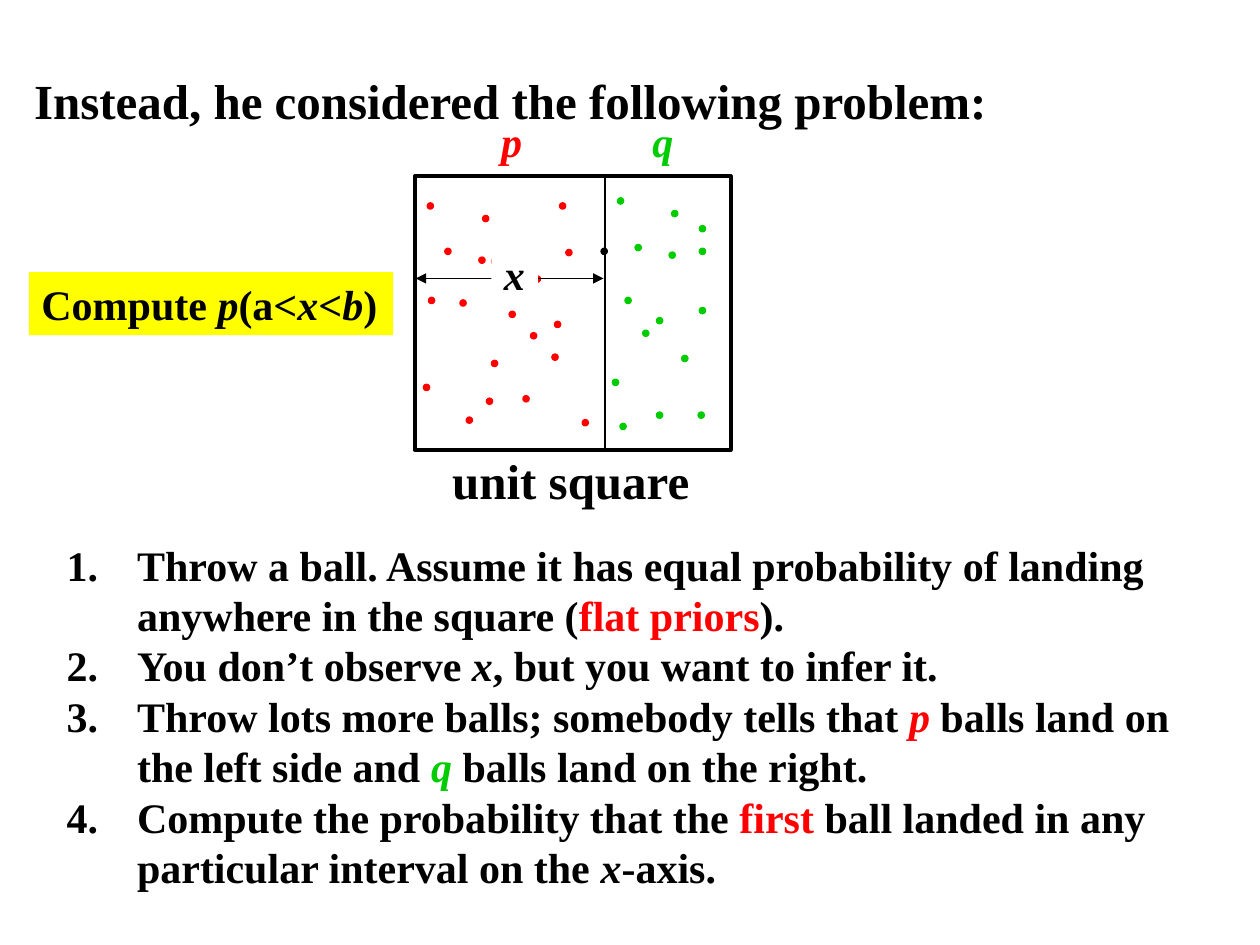
"""Build the unit-square ball-throwing slide on a grid of 1000 columns by 750 rows."""
from typing import NamedTuple, Optional

from lxml import etree
from pptx import Presentation
from pptx.dml.color import RGBColor
from pptx.enum.shapes import MSO_CONNECTOR, MSO_SHAPE
from pptx.enum.text import MSO_ANCHOR, MSO_AUTO_SIZE, PP_ALIGN
from pptx.oxml.ns import qn
from pptx.util import Inches, Pt

LINE = MSO_CONNECTOR.STRAIGHT
OVAL, RECT = MSO_SHAPE.OVAL, MSO_SHAPE.RECTANGLE
TOP, LEFT = MSO_ANCHOR.TOP, PP_ALIGN.LEFT
GROW = MSO_AUTO_SIZE.SHAPE_TO_FIT_TEXT
COLS, ROWS = 1000, 750
CELL = Inches(0.01)
FONT = "Times New Roman"
COLORS = {"black": "000000", "red": "FF0000", "green": "00CC00",
          "white": "FFFFFF", "yellow": "FFFF00"}
BALL = 5
INDENT = 56


class Run(NamedTuple):
    text: str
    color: str = "black"
    italic: bool = False


class Box(NamedTuple):
    col: float
    row: float
    cols: float
    rows: float


class Label(NamedTuple):
    box: Box
    runs: list[Run]
    size: int = 24
    fill: Optional[str] = None


TITLE = Label(Box(17, 51, 781, 57),
              [Run("Instead, he considered the following problem:")], 28)
SQUARE = Box(329, 140, 251, 217)
DIVIDER_COL, ARROW_ROW = 480, 221
STEPS_BOX = Box(43, 423, 917, 293)
STEPS = [
    [Run("Throw a ball. Assume it has equal probability of landing anywhere in the square ("),
     Run("flat priors", "red"), Run(").")],
    [Run("You don’t observe "), Run("x", italic=True),
     Run(", but you want to infer it.")],
    [Run("Throw lots more balls; somebody tells that "), Run("p", "red", True),
     Run(" balls land on the left side and "), Run("q", "green", True),
     Run(" balls land on the right.")],
    [Run("Compute the probability that the "), Run("first", "red"),
     Run(" ball landed in any particular interval on the "),
     Run("x", italic=True), Run("-axis.")],
]
BALLS = {
    "black": [(477, 197)],
    "red": [(383, 171), (390, 205), (424, 219), (444, 161), (440, 255), (340, 236),
            (339, 161), (365, 238), (390, 286), (386, 316), (353, 197), (336, 305),
            (404, 247), (421, 264), (438, 281), (380, 204), (415, 314), (462, 333),
            (449, 198), (370, 331)],
    "green": [(533, 167), (555, 179), (496, 236), (490, 157), (510, 262), (541, 282),
              (554, 327), (504, 194), (486, 301), (555, 244), (531, 200), (521, 327),
              (521, 252), (555, 197), (492, 336)],
}
SQUARE_LABELS = [
    Label(Box(349, 353, 211, 57), [Run("unit square")], 28),
    Label(Box(388, 87, 37, 50), [Run("p", "red", True)]),
    Label(Box(508, 87, 37, 50), [Run("q", "green", True)]),
]
FILLED_LABELS = [
    Label(Box(390, 192, 37, 50), [Run("x", italic=True)], fill="white"),
    Label(Box(23, 216, 289, 50),
          [Run("Compute "), Run("p", italic=True), Run("(a<"),
           Run("x<b", italic=True), Run(")")], fill="yellow"),
]


def rgb(name: str) -> RGBColor:
    return RGBColor.from_string(COLORS[name])


def emu(box: Box) -> list[int]:
    return [round(v * CELL) for v in box]


def write(p, runs: list[Run], size: int) -> None:
    p.alignment = LEFT
    p.line_spacing = Pt(1.2 * size)
    p.space_before = p.space_after = Pt(0)
    p.font.name, p.font.size, p.font.bold = FONT, Pt(size), True
    for run in runs:
        r = p.add_run()
        r.text = run.text
        r.font.color.rgb = rgb(run.color)
        r.font.italic = run.italic


def fill_label(sp, label: Label) -> None:
    sp.left, sp.top, sp.width, sp.height = emu(label.box)
    tf = sp.text_frame
    tf.word_wrap, tf.auto_size, tf.vertical_anchor = False, GROW, TOP
    write(tf.paragraphs[0], label.runs, label.size)


def add_label(shapes, label: Label) -> None:
    if label.fill:
        sp = add_shape(shapes, RECT, label.box, label.fill)
    else:
        sp = shapes.add_textbox(*emu(label.box))
    fill_label(sp, label)


def add_shape(shapes, kind, box: Box, fill: Optional[str] = None,
              line: Optional[str] = None, width: float = 0.75):
    sp = shapes.add_shape(kind, *emu(box))
    sp.shadow.inherit = False
    if fill:
        sp.fill.solid()
        sp.fill.fore_color.rgb = rgb(fill)
    else:
        sp.fill.background()
    if line:
        sp.line.color.rgb = rgb(line)
        sp.line.width = Pt(width)
    else:
        sp.line.fill.background()
    return sp


def add_line(shapes, start: tuple, end: tuple, arrows: bool = False) -> None:
    c = shapes.add_connector(LINE, *(v * CELL for v in start + end))
    c.line.color.rgb = rgb("black")
    c.line.width = Pt(1)
    props = c.element.spPr
    etree.SubElement(props, qn("a:effectLst"))
    if arrows:
        for tag in ("a:headEnd", "a:tailEnd"):
            etree.SubElement(props.find(qn("a:ln")), qn(tag), type="triangle")


def add_balls(shapes, color: str) -> None:
    for col, row in BALLS[color]:
        add_shape(shapes, OVAL, Box(col, row, BALL, BALL), color, color)


def add_steps(shapes) -> None:
    tf = shapes.add_textbox(*emu(STEPS_BOX)).text_frame
    tf.word_wrap, tf.auto_size = True, GROW
    for i, runs in enumerate(STEPS):
        p = tf.add_paragraph() if i else tf.paragraphs[0]
        write(p, runs, 24)
        props = p._p.get_or_add_pPr()
        props.set("marL", str(INDENT * CELL))
        props.set("indent", str(-INDENT * CELL))
        number = etree.Element(qn("a:buAutoNum"), type="arabicPeriod")
        props.insert(list(props).index(props.find(qn("a:defRPr"))), number)


def main() -> None:
    prs = Presentation()
    prs.slide_width, prs.slide_height = COLS * CELL, ROWS * CELL
    s = prs.slides.add_slide(prs.slide_layouts[5])
    shapes = s.shapes
    fill_label(shapes.title, TITLE)
    add_shape(shapes, RECT, SQUARE, line="black", width=2.25)
    add_steps(shapes)
    add_balls(shapes, "black")
    add_line(shapes, (DIVIDER_COL, SQUARE.row),
             (DIVIDER_COL, SQUARE.row + SQUARE.rows))
    for color in ("red", "green"):
        add_balls(shapes.add_group_shape().shapes, color)
    for label in SQUARE_LABELS:
        add_label(shapes, label)
    add_line(shapes, (SQUARE.col + 1, ARROW_ROW), (DIVIDER_COL - 1, ARROW_ROW), True)
    for label in FILLED_LABELS:
        add_label(shapes, label)
    prs.save("out.pptx")


if __name__ == "__main__":
    main()
